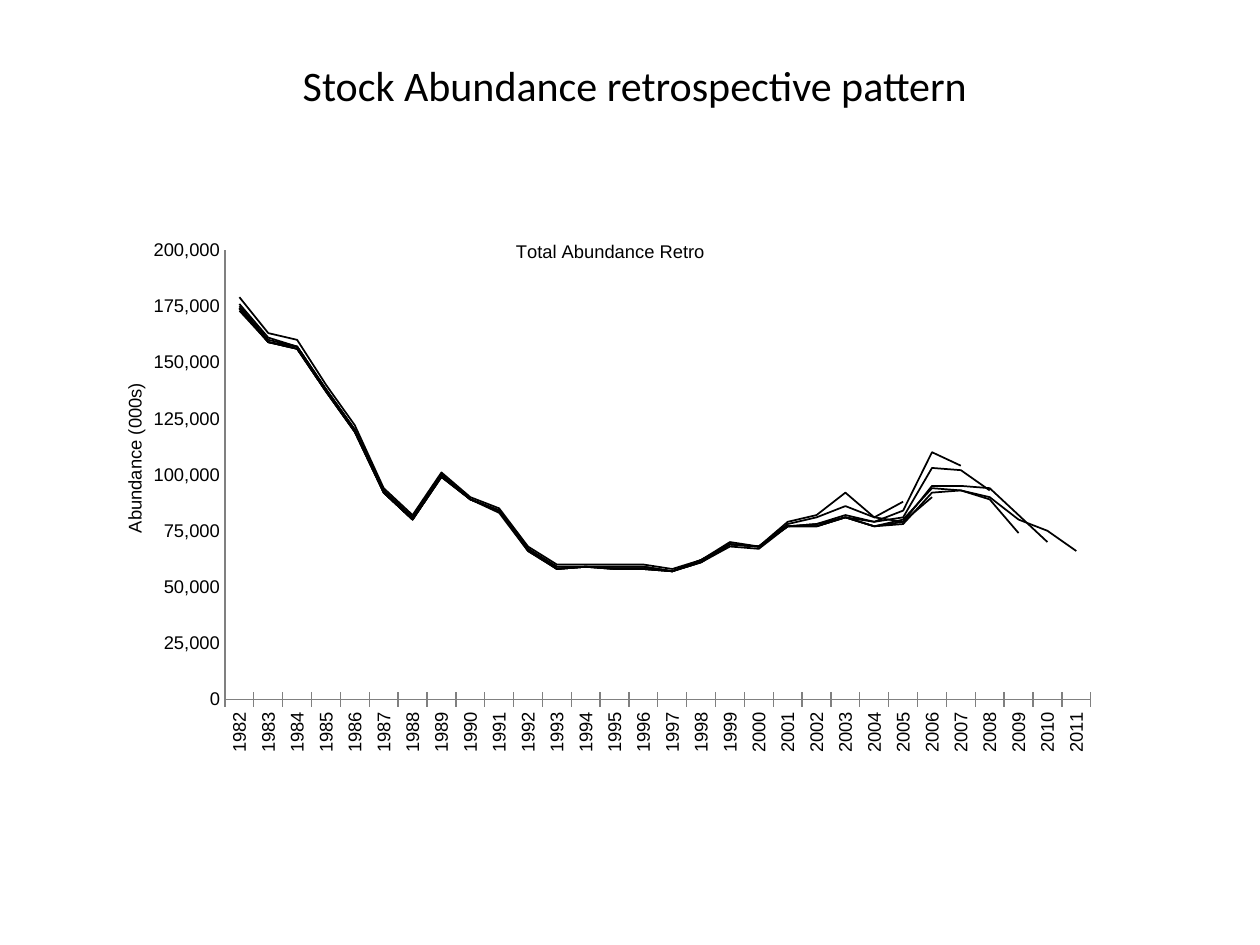
from lxml import etree
from pptx import Presentation
from pptx.chart.data import CategoryChartData
from pptx.dml.color import RGBColor
from pptx.enum.chart import XL_CHART_TYPE, XL_TICK_MARK
from pptx.enum.text import MSO_ANCHOR, PP_ALIGN
from pptx.oxml.ns import qn
from pptx.util import Cm, Pt

LINE = XL_CHART_TYPE.LINE
CROSS, NO_TICK = XL_TICK_MARK.CROSS, XL_TICK_MARK.NONE
CENTER, MIDDLE = PP_ALIGN.CENTER, MSO_ANCHOR.MIDDLE
BLACK = RGBColor(0, 0, 0)
GREY = RGBColor(0x80, 0x80, 0x80)

TITLE_FONT = {"name": "Calibri", "size": Pt(24), "bold": False}
CHART_FONT = {"name": "Arial", "size": Pt(10.5), "bold": False}

YEARS = range(1982, 2012)
THOUSANDS = [
    [173, 159, 156, 137, 119, 92, 80, 99, 89, 83, 66, 58, 59, 58, 58, 57,
     61, 69, 68, 79, 82, 92, 81, 88],
    [174, 159, 156, 137, 119, 92, 80, 100, 89, 84, 67, 58, 59, 59, 59, 57,
     62, 69, 68, 78, 81, 86, 81, 79, 90],
    [174, 159, 156, 137, 119, 92, 80, 99, 89, 84, 66, 58, 59, 58, 58, 57,
     61, 69, 68, 77, 78, 82, 79, 84, 110, 104],
    [176, 161, 157, 138, 120, 93, 81, 100, 89, 84, 67, 59, 59, 59, 59, 57,
     62, 69, 68, 77, 77, 81, 79, 81, 103, 102, 93],
    [179, 163, 160, 140, 122, 94, 82, 101, 90, 85, 68, 60, 60, 60, 60, 58,
     62, 70, 68, 77, 78, 81, 77, 78, 92, 93, 89, 74],
    [175, 160, 157, 138, 120, 93, 81, 100, 89, 84, 67, 59, 59, 59, 59, 57,
     62, 69, 68, 77, 77, 81, 77, 79, 95, 95, 94, 82, 70],
    [174, 159, 157, 138, 120, 92, 80, 99, 89, 84, 67, 58, 59, 58, 58, 57,
     61, 68, 67, 77, 77, 81, 77, 80, 94, 93, 90, 80, 75, 66],
]


def set_font(font, formats):
    for name, value in formats.items():
        setattr(font, name, value)
    font.color.rgb = BLACK


def set_line(line, color, width):
    line.color.rgb = color
    line.width = Pt(width)


def set_layout(parent, **values):
    for old in parent.findall(qn("c:layout")):
        parent.remove(old)
    layout = etree.Element(qn("c:layout"))
    manual = etree.SubElement(layout, qn("c:manualLayout"))
    for name, value in values.items():
        etree.SubElement(manual, qn(f"c:{name}")).set("val", str(value))
    tx = parent.find(qn("c:tx"))
    parent.insert(0 if tx is None else parent.index(tx) + 1, layout)


def set_chart_title(title, text, x, y):
    tf = title.text_frame
    tf.text = text
    set_font(tf.paragraphs[0].runs[0].font, CHART_FONT)
    set_layout(title._element, xMode="edge", yMode="edge", x=x, y=y)


def add_title(s, left, top, width, height):
    sp = s.shapes.title
    sp.left, sp.top, sp.width, sp.height = left, top, width, height
    tf = sp.text_frame
    tf.text = "Stock Abundance retrospective pattern"
    tf.vertical_anchor = MIDDLE
    p = tf.paragraphs[0]
    p.alignment = CENTER
    set_font(p.runs[0].font, TITLE_FONT)


def add_abundance_chart(s, left, top, width, height):
    data = CategoryChartData(number_format="#,##0")
    data.categories = [str(year) for year in YEARS]
    for number, values in enumerate(THOUSANDS, 1):
        data.add_series(f"Series {number}", [v * 1000 for v in values])
    chart = s.shapes.add_chart(LINE, left, top, width, height, data).chart
    set_font(chart.font, CHART_FONT)
    chart.has_legend = False
    chart.plots[0].vary_by_categories = False
    for series in chart.plots[0].series:
        series.smooth = False
        set_line(series.format.line, BLACK, 1)

    set_chart_title(chart.chart_title, "Total Abundance Retro", 0.387, 0.087)
    chart.chart_title.include_in_layout = False
    plot_area = chart._chartSpace.chart.plotArea
    set_layout(plot_area, layoutTarget="inner", xMode="edge", yMode="edge",
               x=0.121, y=0.109, w=0.801, h=0.69)

    years, abundance = chart.category_axis, chart.value_axis
    for axis, tick in ((years, CROSS), (abundance, NO_TICK)):
        axis.major_tick_mark = tick
        axis.minor_tick_mark = NO_TICK
        axis.has_major_gridlines = False
        set_line(axis.format.line, GREY, 0.75)
        set_font(axis.tick_labels.font, CHART_FONT)
    years._element.txPr.bodyPr.set("rot", "-5400000")
    abundance.minimum_scale, abundance.maximum_scale = 0, 200000
    abundance.major_unit = 25000
    abundance.tick_labels.number_format = "#,##0"
    abundance.tick_labels.number_format_is_linked = False
    set_chart_title(abundance.axis_title, "Abundance (000s)", 0.023, 0.308)
    body = abundance.axis_title.text_frame._txBody.bodyPr
    body.set("rot", "-5400000")
    body.set("vert", "horz")


def main():
    prs = Presentation()
    prs.slide_width, prs.slide_height = Cm(25.4), Cm(19.05)
    s = prs.slides.add_slide(prs.slide_layouts[5])
    add_title(s, Cm(5.08), Cm(1.07), Cm(15.44), Cm(1.27))
    add_abundance_chart(s, Cm(1.9), Cm(3.61), Cm(21.79), Cm(13.13))
    prs.save("out.pptx")


if __name__ == "__main__":
    main()
